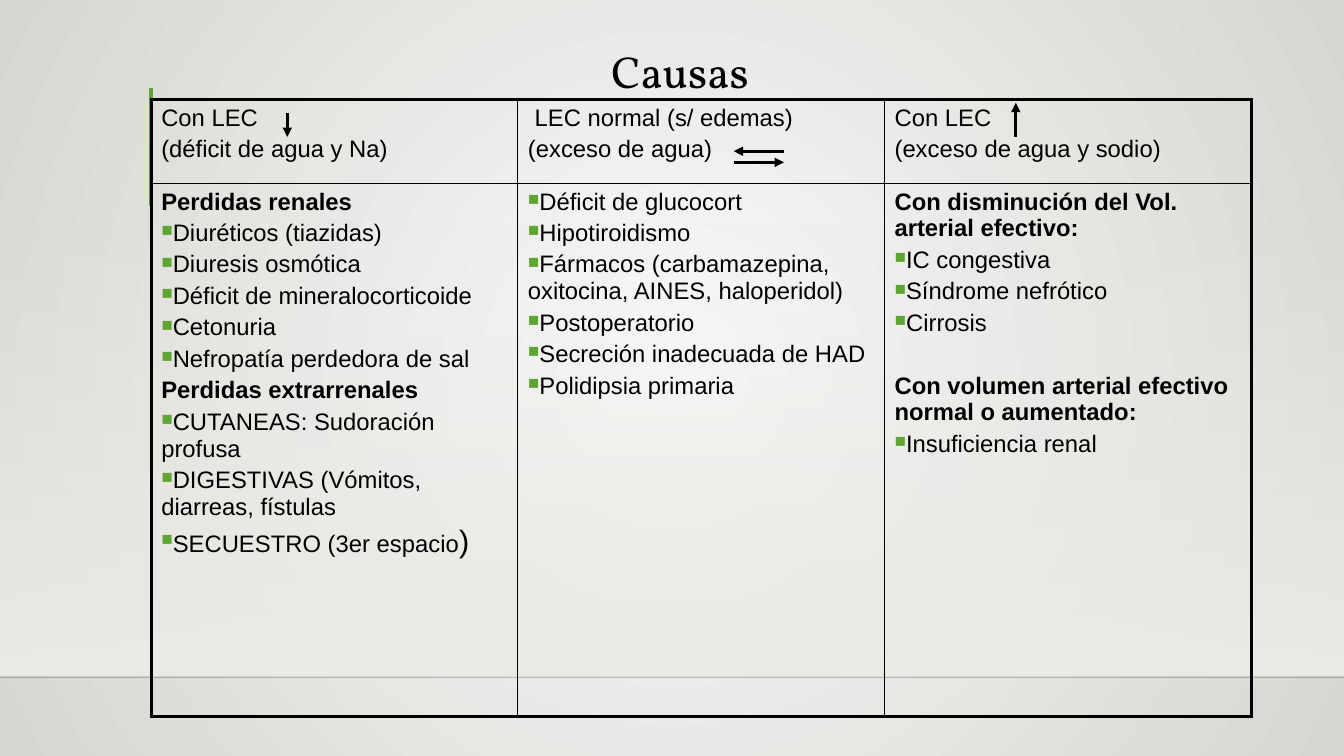
from lxml import etree
from pptx import Presentation, util as u
from pptx.dml.color import RGBColor
from pptx.enum import shapes, text
from pptx.oxml.ns import qn

# Content: header lines, then (heading, items) groups for each column
TITLE = "Causas"
COLUMNS = [
    (["Con LEC", "(déficit de agua y Na)"],
     [("Perdidas renales",
       ["Diuréticos (tiazidas)", "Diuresis osmótica", "Déficit de mineralocorticoide",
        "Cetonuria", "Nefropatía perdedora de sal"]),
      ("Perdidas extrarrenales",
       ["CUTANEAS: Sudoración profusa", "DIGESTIVAS (Vómitos, diarreas, fístulas",
        ("SECUESTRO (3er espacio", ")")])]),
    (["LEC normal (s/ edemas)", "(exceso de agua)"],
     [(None,
       ["Déficit de glucocort", "Hipotiroidismo",
        "Fármacos (carbamazepina, oxitocina, AINES, haloperidol)", "Postoperatorio",
        "Secreción inadecuada de HAD", "Polidipsia primaria"])]),
    (["Con LEC", "(exceso de agua y sodio)"],
     [("Con disminución del Vol. arterial efectivo:",
       ["IC congestiva", "Síndrome nefrótico", "Cirrosis"]),
      ("Con volumen arterial efectivo normal o aumentado:", ["Insuficiencia renal"])]),
]
# Arrows in the header row, in cm: start x, start y, end x, end y
ARROWS = [
    (7.24, 2.84, 7.24, 3.45),
    (18.49, 4.09, 19.76, 4.09),
    (19.76, 3.81, 18.49, 3.81),
    (25.6, 3.45, 25.6, 2.59),
]
BLACK, GREEN, SAND = "000000", "5FA534", "EDEBE7"
SLIDE_WIDTH, SLIDE_HEIGHT = 33.87, 19.05
TABLE_LEFT, TABLE_TOP, COLUMN_WIDTH = 3.81, 2.51, 9.24
ROW_HEIGHTS = [2.11, 13.44]
THIN, THICK = 1, 2.25
TEXT_SIZE, LINE_GAP, GROUP_GAP = 17, 3.4, 26


def color(value):
    return RGBColor.from_string(value)


def add(parent, tag, **attributes):
    return etree.SubElement(parent, qn(tag), attributes)


def set_gradient(fill, first, last):
    fill.gradient()
    for stop, value, position in zip(fill.gradient_stops, (first, last), (0, 1)):
        stop.color.rgb = color(value)
        stop.position = position


def add_line(x1, y1, x2, y2, value, width, arrow=False, opacity=None):
    line = slide.shapes.add_connector(
        shapes.MSO_CONNECTOR.STRAIGHT, u.Cm(x1), u.Cm(y1), u.Cm(x2), u.Cm(y2))
    line.line.color.rgb = color(value)
    line.line.width = u.Pt(width)
    properties = line._element.spPr
    if opacity:
        add(properties.find(".//" + qn("a:srgbClr")), "a:alpha", val=str(opacity * 1000))
    if arrow:
        add(properties.find(qn("a:ln")), "a:tailEnd", type="triangle")
    add(properties, "a:effectLst")


def add_paragraph(cell, content, bold=False, bullet=False, gap=LINE_GAP, indent=0):
    frame = cell.text_frame
    paragraph = frame.paragraphs[0]
    if paragraph.runs:
        paragraph = frame.add_paragraph()
        paragraph.space_before = u.Pt(gap)
    properties = paragraph._p.get_or_add_pPr()
    properties.set("marL", "0")
    properties.set("indent", str(u.Cm(indent)))
    if bullet:
        add(add(properties, "a:buClr"), "a:srgbClr", val=GREEN)
        add(properties, "a:buSzPct", val="65000")
        add(properties, "a:buChar", char="■")
    paragraph.font.size = u.Pt(TEXT_SIZE)
    paragraph.font.name = "Arial"
    paragraph.font.bold = bold
    paragraph.font.color.rgb = color(BLACK)
    parts = (content,) if isinstance(content, str) else content
    for part in parts:
        paragraph.add_run().text = part
    if len(parts) > 1:
        paragraph.runs[-1].font.size = u.Pt(22)


def set_borders(cell, row, column):
    outer = {"L": column == 0, "R": column == len(COLUMNS) - 1,
             "T": row == 0, "B": row == len(ROW_HEIGHTS) - 1}
    properties = cell._tc.get_or_add_tcPr()
    for side, is_outer in outer.items():
        width = u.Pt(THICK if is_outer else THIN)
        border = add(properties, "a:ln" + side, w=str(width))
        add(add(border, "a:solidFill"), "a:srgbClr", val=BLACK)
    cell.fill.background()


presentation = Presentation()
presentation.slide_width = u.Cm(SLIDE_WIDTH)
presentation.slide_height = u.Cm(SLIDE_HEIGHT)
slide = presentation.slides.add_slide(presentation.slide_layouts[5])

# Background: light centre, darker edges
set_gradient(slide.background.fill, "FAFAF9", "D7D5D2")
gradient = slide.background._cSld.find(".//" + qn("a:gradFill"))
gradient.remove(gradient.find(qn("a:lin")))
center = add(gradient, "a:path", path="circle")
add(center, "a:fillToRect", l="50000", t="50000", r="50000", b="50000")

# Wall fading in towards the floor, floor line and green accent
wall = slide.shapes.add_shape(
    shapes.MSO_SHAPE.RECTANGLE, 0, u.Cm(5.59), u.Cm(SLIDE_WIDTH), u.Cm(11.43))
wall.shadow.inherit = False
wall.line.fill.background()
set_gradient(wall.fill, SAND, SAND)
wall.fill.gradient_angle = 270
add(wall._element.spPr.find(".//" + qn("a:srgbClr")), "a:alpha", val="0")
add_line(0, 17.07, SLIDE_WIDTH, 17.07, "000001", 1, opacity=20)
add_line(3.81, 2.21, 3.81, 5.18, GREEN, 3)

# Title
title = slide.shapes.title
title.left, title.top, title.width, title.height = map(u.Cm, (2.74, 1.02, 28.8, 1.57))
title.text_frame.text = TITLE
title.text_frame.vertical_anchor = text.MSO_ANCHOR.BOTTOM
paragraph = title.text_frame.paragraphs[0]
paragraph.alignment = text.PP_ALIGN.CENTER
paragraph.line_spacing = 0.9
paragraph.font.size = u.Pt(32)
paragraph.font.name = "Vollkorn"
paragraph.font.color.rgb = color(BLACK)

# Table of causes
table = slide.shapes.add_table(
    len(ROW_HEIGHTS), len(COLUMNS), u.Cm(TABLE_LEFT), u.Cm(TABLE_TOP),
    u.Cm(COLUMN_WIDTH * len(COLUMNS)), u.Cm(sum(ROW_HEIGHTS))).table
table.first_row = table.horz_banding = False
for row, height in zip(table.rows, ROW_HEIGHTS):
    row.height = u.Cm(height)
for index, (header, groups) in enumerate(COLUMNS):
    table.columns[index].width = u.Cm(COLUMN_WIDTH)
    header_cell, causes_cell = table.cell(0, index), table.cell(1, index)
    for number, line in enumerate(header):
        shifted = index == 1 and number == 0
        add_paragraph(header_cell, line, indent=0.17 if shifted else 0)
    for heading, items in groups:
        if heading:
            gap = GROUP_GAP if index == 2 else LINE_GAP
            add_paragraph(causes_cell, heading, bold=True, gap=gap)
        for item in items:
            add_paragraph(causes_cell, item, bullet=True)
    set_borders(header_cell, 0, index)
    set_borders(causes_cell, 1, index)

# Arrows for the change in volume
for arrow in ARROWS:
    add_line(*arrow, BLACK, THICK, arrow=True)

presentation.save("out.pptx")
